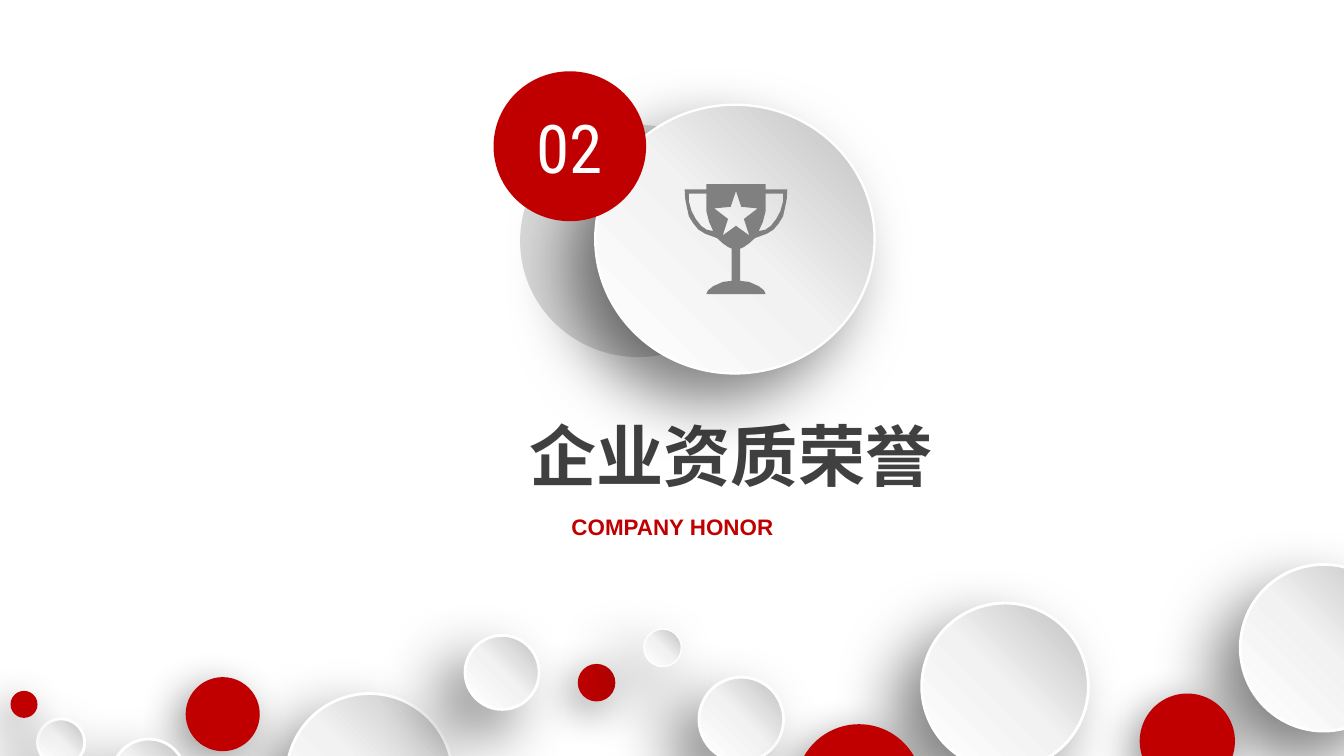
"""Build the section slide on company honors."""
import lxml.etree
import pptx
import pptx.dml.color
import pptx.enum.shapes
import pptx.enum.text
import pptx.oxml.ns
import pptx.util

Cm = pptx.util.Cm
Pt = pptx.util.Pt
Color = pptx.dml.color.RGBColor
OVAL = pptx.enum.shapes.MSO_SHAPE.OVAL

RED = Color(0xC0, 0x00, 0x00)
WHITE = Color(0xFF, 0xFF, 0xFF)
PALE = Color(0xF2, 0xF2, 0xF2)
SILVER = Color(0xBF, 0xBF, 0xBF)
LIGHT = Color(0xD9, 0xD9, 0xD9)
GRAY = Color(0x80, 0x80, 0x80)
DARK = Color(0x40, 0x40, 0x40)
BLACK = Color(0x00, 0x00, 0x00)

BALLS = [
    ("gray", 17.42, 11.4, 3.15), ("gray", 23.44, 10.67, 3.15),
    ("gray", 5.41, 13.11, 3.15), ("gray", 13.21, 12.8, 1.6),
    ("red", 21.54, 13.11, 1.8), ("red", 15.04, 13.69, 2.39),
    ("gray", 8.79, 12.01, 1.4), ("red", 3.51, 12.8, 1.4),
    ("gray", 2.11, 13.97, 1.4), ("gray", 0.71, 13.59, 0.89),
    ("red", 10.92, 12.55, 0.71), ("gray", 12.17, 11.89, 0.71),
    ("red", 0.2, 13.06, 0.51),
]

AXIS = 13.91
CUP = [
    (0.56, 3.48), (0.56, 3.58), (0.97, 3.58), (0.96, 3.76), (0.93, 3.91),
    (0.89, 4.09), (0.81, 4.22), (0.71, 4.34), (0.58, 4.42), (0.36, 4.5),
    (0.25, 4.6), (0.15, 4.67), (0.08, 4.7), (0.08, 5.31), (0.25, 5.33),
    (0.43, 5.41), (0.53, 5.49), (0.56, 5.56),
]
HANDLE = [
    (0.56, 3.66), (0.89, 3.66), (0.89, 3.81), (0.84, 3.99), (0.76, 4.14),
    (0.66, 4.27), (0.56, 4.34), (0.43, 4.37), (0.51, 4.19), (0.56, 3.99),
]
STAR = [(0, 3.61), (0.1, 3.91), (0.41, 3.94), (0.15, 4.14), (0.25, 4.45), (0, 4.27)]


def add_node(root, tag, **attrs):
    """Append a drawing element and return it."""
    node = lxml.etree.SubElement(root, pptx.oxml.ns.qn("a:" + tag))
    for name, value in attrs.items():
        node.set(name, str(value))
    return node


def add_disc(slide, left, top, width, height, color, edge=None, weight=1.25):
    """Add a flat ellipse."""
    disc = slide.shapes.add_shape(OVAL, Cm(left), Cm(top), Cm(width), Cm(height))
    disc.shadow.inherit = False
    disc.fill.solid()
    disc.fill.fore_color.rgb = color
    if edge is None:
        disc.line.fill.background()
    else:
        disc.line.color.rgb = edge
        disc.line.width = Pt(weight)
    return disc


def shade(disc):
    """Give a disc its diagonal gradient."""
    disc.fill.gradient()
    disc.fill.gradient_angle = 45
    stops = disc.element.spPr.find(".//" + pptx.oxml.ns.qn("a:gsLst"))
    for stop in list(stops):
        stops.remove(stop)
    for place, color in ((0, WHITE), (50, PALE), (100, SILVER)):
        stop = add_node(stops, "gs", pos=place * 1000)
        add_node(stop, "srgbClr", val=color)


def cast(disc, alpha, blur, gap):
    """Cast a soft shadow to the lower left."""
    effects = disc.element.spPr.find(pptx.oxml.ns.qn("a:effectLst"))
    shadow = add_node(effects, "outerShdw", blurRad=Pt(blur), dist=Pt(gap),
                      dir=135 * 60000, algn="tr", rotWithShape=0)
    tint = add_node(shadow, "srgbClr", val=BLACK)
    add_node(tint, "alpha", val=alpha * 1000)


def add_pearl(slide, left, top, width, height, weight=1.5):
    """Add a shaded disc with a pale rim."""
    pearl = add_disc(slide, left, top, width, height, PALE, WHITE, weight)
    shade(pearl)
    cast(pearl, 50, 35, 20)


def add_ball(slide, kind, left, top, size):
    """Add one of the loose balls."""
    if kind == "red":
        cast(add_disc(slide, left, top, size, size, RED), 40, 22, 8)
    else:
        add_pearl(slide, left, top, size, size, 1.5 if size > 0.8 else 0.75)


def place(points, side=1):
    """Place points on one side of the trophy axis."""
    return [(Cm(AXIS + side * gap), Cm(top)) for gap, top in points]


def add_trophy(slide):
    """Add the trophy with open handles and star."""
    loops = [place(half) + place(half, -1)[::-1] for half in (CUP, STAR)]
    loops += [place(HANDLE, side) for side in (1, -1)]
    first, *holes = loops
    pen = slide.shapes.build_freeform(*first[0])
    pen.add_line_segments(first[1:], close=True)
    for hole in holes:
        pen.move_to(*hole[0])
        pen.add_line_segments(hole[1:], close=True)
    trophy = pen.convert_to_shape()
    trophy.shadow.inherit = False
    trophy.fill.solid()
    trophy.fill.fore_color.rgb = GRAY
    trophy.line.fill.background()


def write(frame, text, size, font, color, bold=False):
    """Write one centred line."""
    line = frame.paragraphs[0]
    line.text = text
    line.alignment = pptx.enum.text.PP_ALIGN.CENTER
    line.font.size = Pt(size)
    line.font.name = font
    line.font.bold = bold
    line.font.color.rgb = color


def add_label(slide, left, top, width, height, text, size, color, inset):
    """Add a bold text box."""
    box = slide.shapes.add_textbox(Cm(left), Cm(top), Cm(width), Cm(height))
    frame = box.text_frame
    frame.word_wrap = True
    frame.auto_size = pptx.enum.text.MSO_AUTO_SIZE.SHAPE_TO_FIT_TEXT
    frame.margin_left = frame.margin_right = Cm(inset)
    write(frame, text, size, "Arial", color, True)


def add_badge(slide):
    """Add the red section number."""
    badge = add_disc(slide, 9.35, 1.37, 2.84, 2.79, RED, RED)
    badge.text_frame.vertical_anchor = pptx.enum.text.MSO_ANCHOR.MIDDLE
    write(badge.text_frame, "02", 36, "Roboto Condensed", WHITE)


def main():
    """Build and save the slide."""
    deck = pptx.Presentation()
    deck.slide_width, deck.slide_height = Cm(25.4), Cm(14.29)
    slide = deck.slides.add_slide(deck.slide_layouts[6])
    add_disc(slide, 9.83, 2.36, 4.47, 4.39, LIGHT)
    add_label(slide, 9.93, 7.7, 7.77, 1.8, "企业资质荣誉", 36, DARK, 0)
    add_label(slide, 9.88, 9.58, 5.66, 0.76, "COMPANY HONOR", 12, RED, 0.25)
    for ball in BALLS:
        add_ball(slide, *ball)
    add_pearl(slide, 11.25, 1.98, 5.28, 5.08, 1.25)
    add_trophy(slide)
    add_badge(slide)
    deck.save("out.pptx")


if __name__ == "__main__":
    main()
